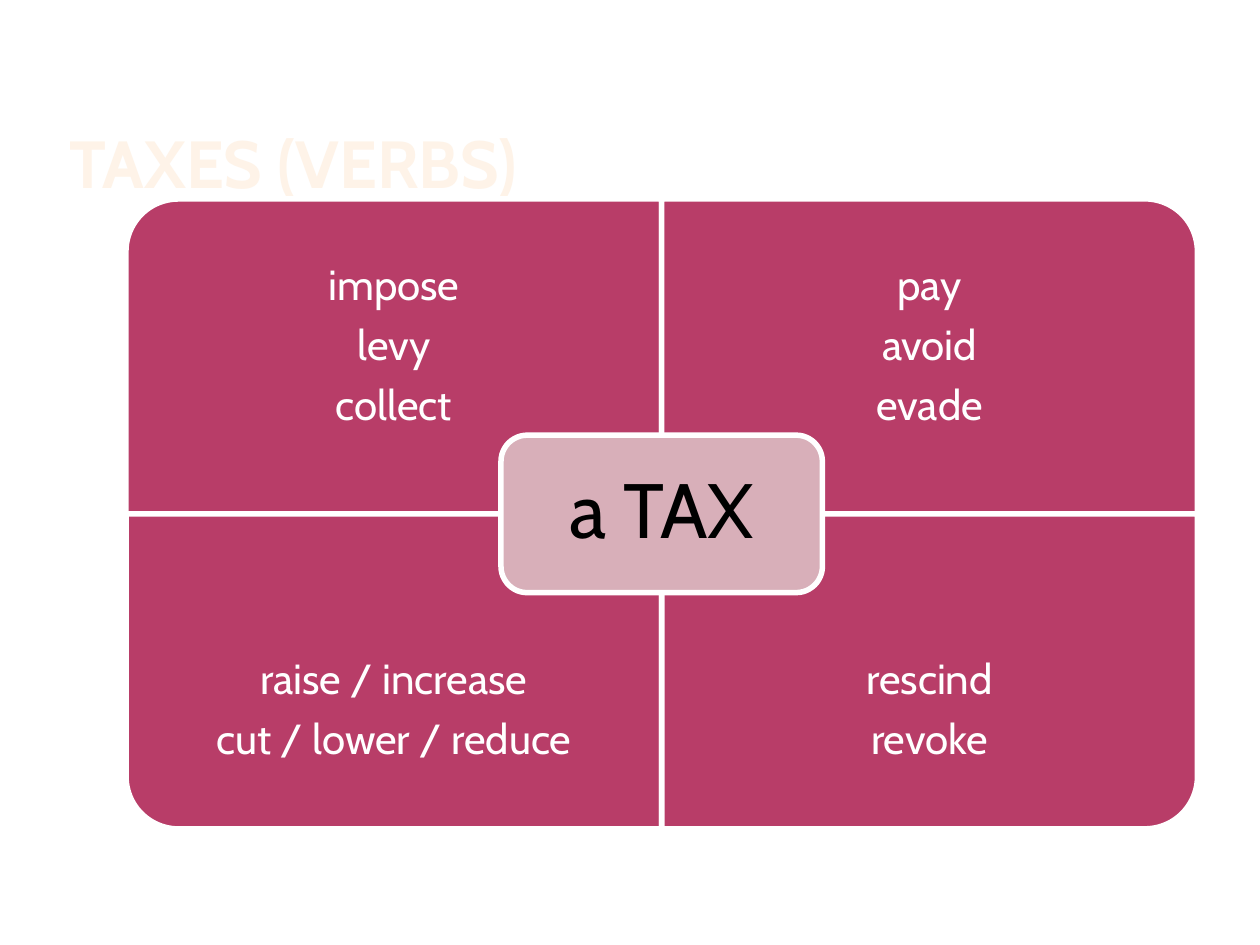
import pptx
import pptx.util
import pptx.dml.color
import pptx.enum.shapes
import pptx.enum.text

Cm = pptx.util.Cm
Pt = pptx.util.Pt
Form = pptx.enum.shapes.MSO_SHAPE
Align = pptx.enum.text.PP_ALIGN
Anchor = pptx.enum.text.MSO_ANCHOR

HUES = {"title": "FEF3E8", "panel": "B83D68", "core": "D8AFB9",
        "white": "FFFFFF", "black": "000000"}


def hue(name):
    return pptx.dml.color.RGBColor.from_string(HUES[name])


class Deck:
    face = "Cabin"
    edge = 3.15

    def __init__(self, wide, high):
        self.file = pptx.Presentation()
        self.file.slide_width = Cm(wide)
        self.file.slide_height = Cm(high)
        self.slide = self.file.slides.add_slide(self.file.slide_layouts[5])

    def style(self, para, size, color, align, bold=False):
        para.alignment = align
        font = para.font
        font.name, font.size, font.bold = self.face, Pt(size), bold
        font.color.rgb = hue(color)

    def frame(self, shape, anchor, side, top):
        frame = shape.text_frame
        frame.word_wrap = True
        frame.auto_size = pptx.enum.text.MSO_AUTO_SIZE.NONE
        frame.vertical_anchor = anchor
        frame.margin_left = frame.margin_right = Cm(side)
        frame.margin_top = frame.margin_bottom = Cm(top)
        return frame

    def title(self, text, left, top, wide, high):
        shape = self.slide.shapes.title
        shape.left, shape.top = Cm(left), Cm(top)
        shape.width, shape.height = Cm(wide), Cm(high)
        frame = self.frame(shape, Anchor.BOTTOM, 0.13, 0)
        frame.text = text
        self.style(frame.paragraphs[0], 38, "title", Align.LEFT, True)

    def panel(self, form, fill, left, top, wide, high, turn=0):
        if turn % 180:
            left, top = left + (wide - high) / 2, top + (high - wide) / 2
            wide, high = high, wide
        shape = self.slide.shapes.add_shape(
            form, Cm(left), Cm(top), Cm(wide), Cm(high))
        shape.rotation = turn
        shape.shadow.inherit = False
        shape.fill.solid()
        shape.fill.fore_color.rgb = hue(fill)
        shape.line.color.rgb = hue("white")
        shape.line.width = Pt(self.edge)

    def text(self, lines, size, color, left, top, wide, high):
        box = self.slide.shapes.add_textbox(
            Cm(left), Cm(top), Cm(wide), Cm(high))
        frame = self.frame(box, Anchor.MIDDLE, 0.47, 0.47)
        frame.text = "\n".join(lines)
        for para in frame.paragraphs:
            para.line_spacing = 0.9
            para.space_after = Pt(size * 0.35)
            self.style(para, size, color, Align.CENTER)


def main():
    deck = Deck(25.4, 19.05)
    deck.title("TAXES (VERBS)", 1.27, 0.89, 20.12, 3.18)

    left, top, wide, high = 2.54, 4.01, 10.8, 6.35
    deep = high * 0.75
    verbs = [
        (0, 0, 270, 0.6, ["impose", "levy", "collect"]),
        (1, 0, 0, 0.6, ["pay", "avoid", "evade"]),
        (0, 1, 180, high - deep, ["raise / increase", "cut / lower / reduce"]),
        (1, 1, 90, high - deep, ["rescind", "revoke"]),
    ]
    for col, row, turn, drop, lines in verbs:
        x, y = left + col * wide, top + row * high
        deck.panel(Form.ROUND_1_RECTANGLE, "panel", x, y, wide, high, turn)
        deck.text(lines, 24, "white", x, y + drop, wide, deep)

    broad, tall = wide * 0.6, high / 2
    core = (left + wide - broad / 2, top + high - tall / 2, broad, tall)
    deck.panel(Form.ROUNDED_RECTANGLE, "core", *core)
    deck.text(["a TAX"], 44, "black", *core)

    deck.file.save("out.pptx")


if __name__ == "__main__":
    main()
